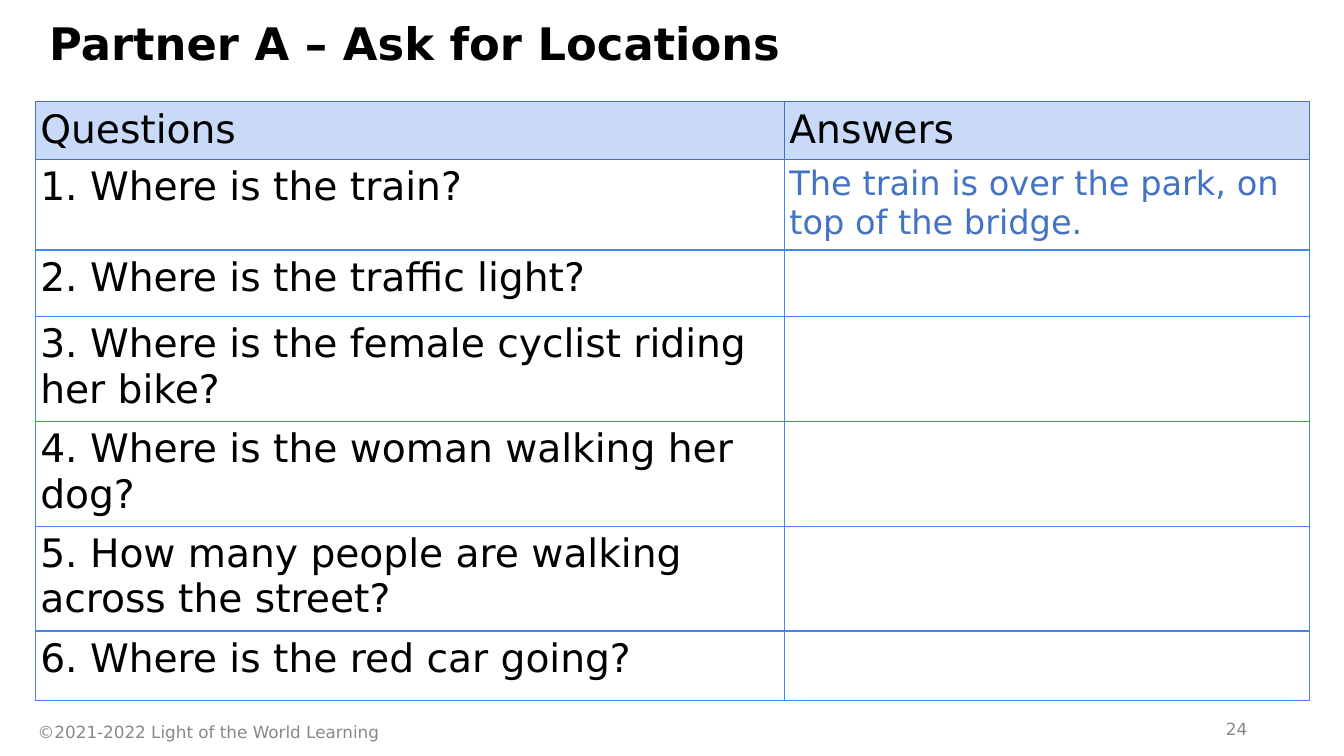
from lxml import etree
from pptx import Presentation
from pptx import util as u
from pptx.dml import color
from pptx.enum import text
from pptx.oxml import ns

FONT = "DejaVu Sans"
BLACK, GREY, BLUE = "000000", "888888", "4472C4"
HEADER_FILL, GRID = "C9DAF8", "4285F4"
ROWS = [
    (0.57, "Questions", "Answers"),
    (0.9, "1. Where is the train?",
     "The train is over the park, on top of the bridge."),
    (0.66, "2. Where is the traffic light?", ""),
    (1.04, "3. Where is the female cyclist riding her bike?", ""),
    (1.04, "4. Where is the woman walking her dog?", ""),
    (1.04, "5. How many people are walking across the street?", ""),
    (0.69, "6. Where is the red car going?", ""),
]


def rgb(hex_color):
    """Turn a hex string into a colour."""
    return color.RGBColor.from_string(hex_color)


def style(p, size, hex_color, bold=False):
    """Format every run of a paragraph."""
    for r in p.runs:
        r.font.name = FONT
        r.font.size = u.Pt(size)
        r.font.bold = bold
        r.font.color.rgb = rgb(hex_color)


def add_label(s, box, words, size, hex_color, bold=False,
              align=text.PP_ALIGN.LEFT, anchor=text.MSO_ANCHOR.MIDDLE):
    """Place one line of text in a box."""
    tf = s.shapes.add_textbox(*map(u.Inches, box)).text_frame
    tf.word_wrap = True
    tf.vertical_anchor = anchor
    tf.text = words
    p = tf.paragraphs[0]
    p.alignment = align
    style(p, size, hex_color, bold)


def add_borders(cell, top, other):
    """Draw the four one-point borders of a cell."""
    tcPr = cell._tc.get_or_add_tcPr()
    for side in ("lnL", "lnR", "lnT", "lnB"):
        ln = etree.SubElement(tcPr, ns.qn(f"a:{side}"), w=str(u.Pt(1)))
        fill = etree.SubElement(ln, ns.qn("a:solidFill"))
        etree.SubElement(fill, ns.qn("a:srgbClr"),
                         val=top if side == "lnT" else other)


def add_question_table(s, box, first_col):
    """Fill a box with the table of questions and answers."""
    left, top, width, height = box
    table = s.shapes.add_table(len(ROWS), 2, *map(u.Inches, box)).table
    table.first_row = table.horz_banding = False
    table.columns[0].width = u.Inches(first_col)
    table.columns[1].width = u.Inches(width - first_col)
    for i, (row_height, *words) in enumerate(ROWS):
        table.rows[i].height = u.Inches(row_height)
        for j, word in enumerate(words):
            cell = table.cell(i, j)
            cell.margin_left = cell.margin_right = u.Inches(0.05)
            cell.margin_top = cell.margin_bottom = u.Inches(0.05)
            add_borders(cell, BLUE if i < 2 else GRID, GRID if i else BLUE)
            if i == 0:
                cell.fill.solid()
                cell.fill.fore_color.rgb = rgb(HEADER_FILL)
            else:
                cell.fill.background()
            if word:
                cell.text_frame.text = word
                is_answer = i > 0 and j == 1
                style(cell.text_frame.paragraphs[0],
                      24 if is_answer else 28, BLUE if is_answer else BLACK)


def add_footer(s, box):
    """Place the copyright line and the page number in a strip."""
    left, top, width, height = box
    add_label(s, (left, top + 0.04, 4.14, height - 0.02),
              "©2021-2022 Light of the World Learning", 12, GREY,
              align=text.PP_ALIGN.CENTER)
    add_label(s, (left + width - 3, top, 3, height), "24", 12, GREY,
              align=text.PP_ALIGN.RIGHT)


def main():
    """Build and save the slide."""
    prs = Presentation()
    prs.slide_width, prs.slide_height = u.Inches(13.33), u.Inches(7.5)
    s = prs.slides.add_slide(prs.slide_layouts[6])
    add_label(s, (0.39, 0.11, 12.9, 0.84), "Partner A – Ask for Locations",
              32, BLACK, True, anchor=text.MSO_ANCHOR.TOP)
    add_question_table(s, (0.35, 1.01, 12.64, sum(row[0] for row in ROWS)), 7.43)
    add_footer(s, (0, 7.03, 12.47, 0.4))
    prs.save("out.pptx")


if __name__ == "__main__":
    main()
